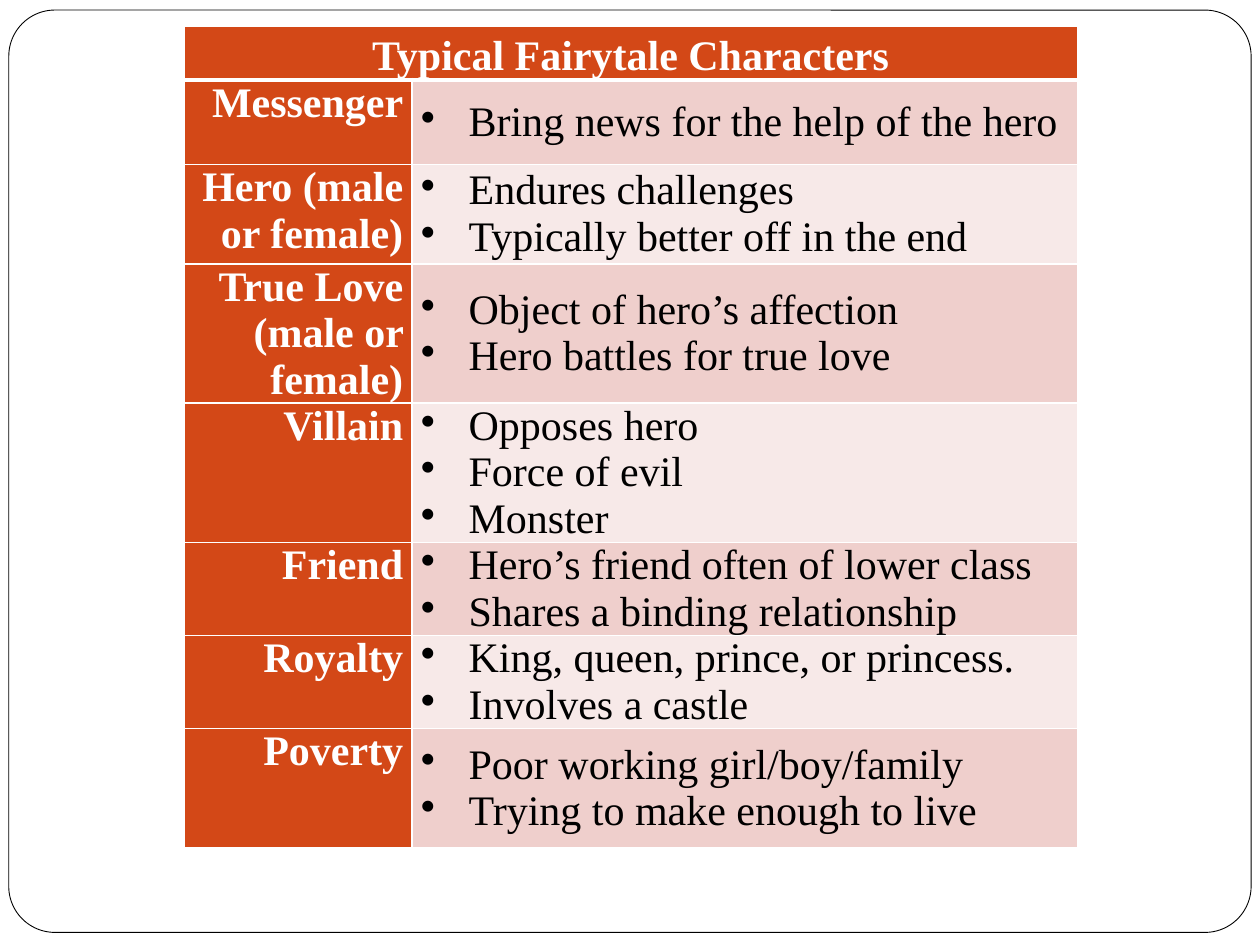
from lxml import etree
from pptx import Presentation
from pptx.dml.color import RGBColor
from pptx.enum.shapes import MSO_SHAPE
from pptx.enum.text import MSO_ANCHOR, PP_ALIGN
from pptx.oxml import parse_xml
from pptx.oxml.ns import nsdecls, qn
from pptx.util import Inches, Pt

CENTER, LEFT, RIGHT = PP_ALIGN.CENTER, PP_ALIGN.LEFT, PP_ALIGN.RIGHT
TOP, MIDDLE = MSO_ANCHOR.TOP, MSO_ANCHOR.MIDDLE
ORANGE, WHITE, BLACK = "D34817", "FFFFFF", "000000"
BANDS = ["EFCFCC", "F7E9E8"]
TITLE = "Typical Fairytale Characters"
CHARACTERS = [
    ("Messenger", ["Bring news for the help of the hero"]),
    ("Hero (male or female)", ["Endures challenges", "Typically better off in the end"]),
    ("True Love (male or female)", ["Object of hero’s affection", "Hero battles for true love"]),
    ("Villain", ["Opposes hero", "Force of evil", "Monster"]),
    ("Friend", ["Hero’s friend often of lower class", "Shares a binding relationship"]),
    ("Royalty", ["King, queen, prince, or princess.", "Involves a castle"]),
    ("Poverty", ["Poor working girl/boy/family", "Trying to make enough to live"]),
]
COLUMN_WIDTHS = [1.81, 5.28]
ROW_HEIGHTS = [0.31, 0.67, 0.79, 0.79, 0.86, 0.53, 0.53, 0.95]
TABLE_HEIGHT = 6.88
INDENT = Inches(0.38)


def color(value):
    return RGBColor.from_string(value)


def fill_cell(cell, lines, fill, ink, align, anchor=TOP, bold=True, bottom_width=1):
    """Write the lines into the cell and give it its fill, margins and white borders."""
    cell.fill.solid()
    cell.fill.fore_color.rgb = color(fill)
    cell.vertical_anchor = anchor
    cell.margin_left = cell.margin_right = Inches(0.07)
    cell.margin_top = cell.margin_bottom = 0
    cell.text = "\n".join(lines)
    for paragraph in cell.text_frame.paragraphs:
        paragraph.alignment = align
        paragraph.font.name = "Times New Roman"
        paragraph.font.size = Pt(24)
        paragraph.font.bold = bold
        paragraph.font.color.rgb = color(ink)
    properties = cell._tc.get_or_add_tcPr()
    for position, side in enumerate("LRTB"):
        width = Pt(bottom_width if side == "B" else 1)
        properties.insert(position, parse_xml(
            f'<a:ln{side} {nsdecls("a")} w="{width}"><a:solidFill>'
            f'<a:srgbClr val="{WHITE}"/></a:solidFill></a:ln{side}>'))


presentation = Presentation()
presentation.slide_width = Inches(10)
presentation.slide_height = Inches(7.5)
slide = presentation.slides.add_slide(presentation.slide_layouts[6])

frame = slide.shapes.add_shape(MSO_SHAPE.ROUNDED_RECTANGLE, Inches(0.07), Inches(0.08),
                               Inches(9.86), Inches(7.32))
frame.adjustments[0] = 0.05
frame.shadow.inherit = False
frame.fill.solid()
frame.fill.fore_color.rgb = color(WHITE)
frame.line.color.rgb = color(BLACK)
frame.line.width = Pt(0.5)

table_frame = slide.shapes.add_table(len(ROW_HEIGHTS), len(COLUMN_WIDTHS), Inches(1.46),
                                     Inches(0.21), Inches(sum(COLUMN_WIDTHS)),
                                     Inches(TABLE_HEIGHT))
table = table_frame.table
for column, width in zip(table.columns, COLUMN_WIDTHS):
    column.width = Inches(width)
for row, height in zip(table.rows, ROW_HEIGHTS):
    row.height = Inches(height)
table_frame.height = Inches(TABLE_HEIGHT)

title_cell = table.cell(0, 0)
title_cell.merge(table.cell(0, 1))
fill_cell(title_cell, [TITLE], ORANGE, WHITE, CENTER, bottom_width=3)
title_cell.text_frame.paragraphs[0].line_spacing = 1.15

for index, (character, traits) in enumerate(CHARACTERS):
    name_cell, trait_cell = table.rows[index + 1].cells
    fill_cell(name_cell, [character], ORANGE, WHITE, RIGHT)
    fill_cell(trait_cell, traits, BANDS[index % 2], BLACK, LEFT, MIDDLE, bold=False)
    for paragraph in trait_cell.text_frame.paragraphs:
        properties = paragraph._p.get_or_add_pPr()
        properties.set("marL", str(INDENT))
        properties.set("indent", str(-INDENT))
        bullet = etree.Element(qn("a:buChar"), char="•")
        properties.find(qn("a:defRPr")).addprevious(bullet)

presentation.save("out.pptx")
